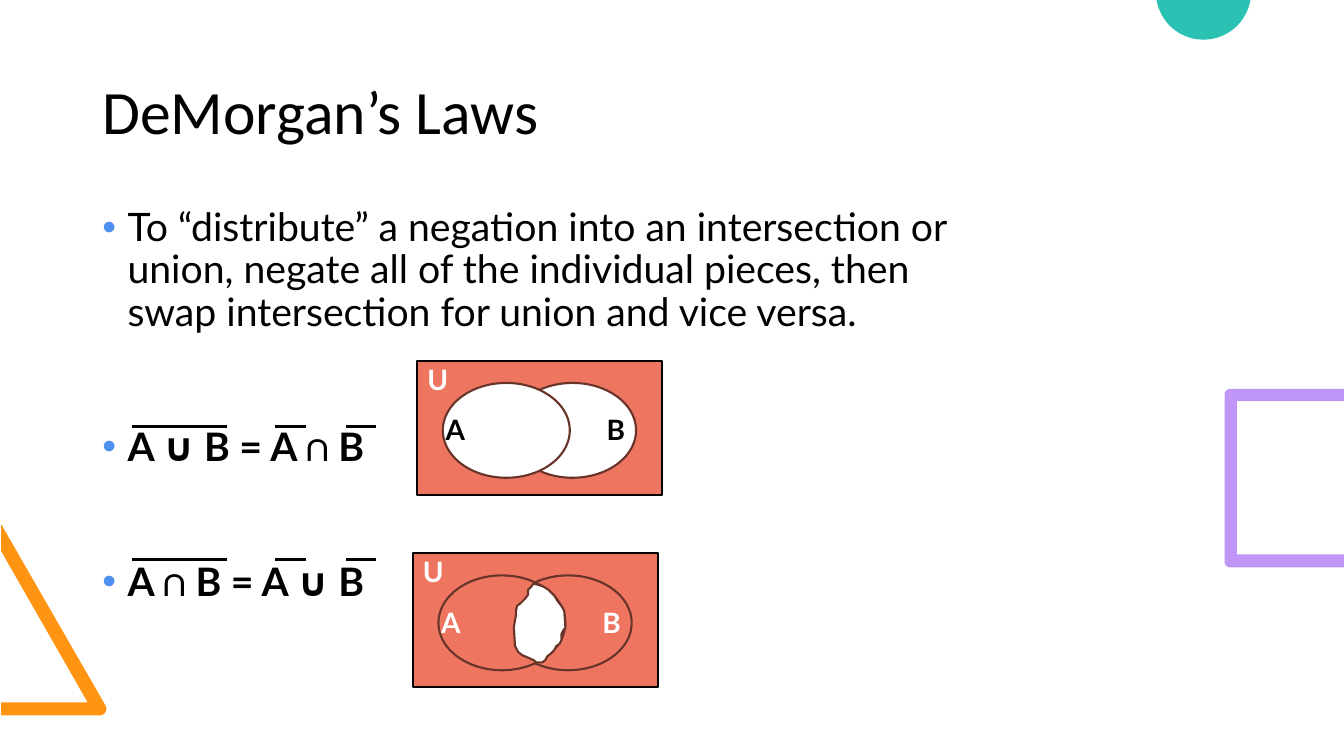
from math import cos, radians, sin

from lxml.etree import SubElement
from pptx import Presentation
from pptx.dml.color import RGBColor
from pptx.enum.shapes import MSO_CONNECTOR, MSO_SHAPE
from pptx.enum.text import MSO_ANCHOR, MSO_AUTO_SIZE, PP_ALIGN
from pptx.oxml.ns import qn
from pptx.util import Cm, Pt

BLACK = RGBColor(0x00, 0x00, 0x00)
WHITE = RGBColor(0xFF, 0xFF, 0xFF)
CORAL = RGBColor(0xEE, 0x76, 0x60)
BROWN = RGBColor(0x68, 0x34, 0x2A)
ORANGE = RGBColor(0xFF, 0x94, 0x13)
TEAL = RGBColor(0x2B, 0xC2, 0xB4)
PURPLE = RGBColor(0xC0, 0x97, 0xF8)
BULLET_BLUE = "4D90EF"

TITLE = "DeMorgan’s Laws"
BULLETS = [
    ("To “distribute” a negation into an intersection or union, negate all of "
     "the individual pieces, then swap intersection for union and vice versa.", False, 10),
    ("A ∪ B = A ∩ B", True, 58.2),
    ("A ∩ B = A ∪ B", True, 58.2),
]

NEGATION_BARS = [(3.33, 5.72), (6.93, 7.70), (8.71, 9.47)]
NEGATION_ROWS = [10.74, 14.10]

VENN_DIAGRAMS = [
    (10.52, 9.09, WHITE, BLACK),
    (10.41, 13.94, CORAL, WHITE),
]
UNIVERSE_SIZE = (6.17, 3.38)
SET_SIZE = (3.20, 2.39)
SET_OFFSETS = [(2.31, 0.56), (0.64, 0.56)]
LABEL_SIZE = (0.99, 1.12)
LABEL_OFFSETS = {"U": (0, -0.09), "A": (0.46, 1.19), "B": (4.52, 1.19)}

INTERSECTION = [
    (13.44, 14.71), (13.39, 14.78), (13.31, 14.86), (13.31, 14.99), (13.23, 15.09),
    (13.13, 15.19), (13.03, 15.27), (13.00, 15.42), (13.00, 15.52), (12.95, 15.80),
    (12.98, 16.28), (13.06, 16.43), (13.16, 16.51), (13.28, 16.56), (13.39, 16.61),
    (13.46, 16.64), (13.51, 16.69), (13.67, 16.69), (13.74, 16.64), (13.79, 16.54),
    (13.87, 16.48), (13.97, 16.38), (14.02, 16.28), (14.10, 16.23), (14.15, 16.13),
    (14.15, 15.98), (14.20, 15.88), (14.25, 15.82), (14.22, 15.39), (14.15, 15.27),
    (14.05, 15.14), (13.97, 15.01), (13.82, 14.86), (13.69, 14.78), (13.54, 14.73),
]


def arc(center_x, center_y, radius, start, end, steps=12):
    angles = [radians(start + (end - start) * step / steps) for step in range(steps + 1)]
    return [(center_x + radius * cos(angle), center_y + radius * sin(angle))
            for angle in angles]


DECORATIONS = [
    ([(0.03, 18.03), (0.03, 17.70), (2.21, 17.70), (0.03, 13.89), (0.03, 13.21)]
     + arc(2.51, 17.86, 0.17, -30, 90), ORANGE),
    (arc(30.33, -0.20, 1.20, 9.6, 170.4, 60), TEAL),
    ([(33.87, 14.30), (33.87, 13.97), (31.17, 13.97), (31.17, 10.11),
      (33.87, 10.11), (33.87, 9.80)]
     + arc(31.01, 9.95, 0.15, 270, 180) + arc(31.01, 14.15, 0.15, 180, 90), PURPLE),
]


def paint(shape, fill, line=None):
    shape.shadow.inherit = False
    shape.fill.solid()
    shape.fill.fore_color.rgb = fill
    if line is None:
        shape.line.fill.background()
    else:
        shape.line.color.rgb = line
        shape.line.width = Pt(1.5)


def add_outline(shapes, points, fill, line=None):
    corners = [(Cm(x), Cm(y)) for x, y in points]
    builder = shapes.build_freeform(*corners[0])
    builder.add_line_segments(corners[1:], close=True)
    paint(builder.convert_to_shape(), fill, line)


def add_text_box(shapes, left, top, width, height):
    text_frame = shapes.add_textbox(Cm(left), Cm(top), Cm(width), Cm(height)).text_frame
    text_frame.word_wrap = True
    return text_frame


def format_text(paragraph, font_name, size, color, bold=False):
    paragraph.alignment = PP_ALIGN.LEFT
    for run in paragraph.runs:
        run.font.name = font_name
        run.font.size = Pt(size)
        run.font.color.rgb = color
        run.font.bold = bold


def add_bullet(paragraph):
    properties = paragraph._p.get_or_add_pPr()
    properties.set("marL", str(Cm(0.635)))
    properties.set("indent", str(-Cm(0.635)))
    color = SubElement(properties, qn("a:buClr"))
    SubElement(color, qn("a:srgbClr")).set("val", BULLET_BLUE)
    SubElement(properties, qn("a:buFont")).set("typeface", "Arial")
    SubElement(properties, qn("a:buChar")).set("char", "•")


def add_title(slide):
    text_frame = add_text_box(slide.shapes, 2.33, 0.84, 29.21, 4.09)
    text_frame.vertical_anchor = MSO_ANCHOR.MIDDLE
    text_frame.text = TITLE
    paragraph = text_frame.paragraphs[0]
    paragraph.line_spacing = 0.9
    format_text(paragraph, "Calibri", 44, BLACK)


def add_body(slide):
    text_frame = add_text_box(slide.shapes, 2.33, 5.11, 22.25, 11.91)
    text_frame.text = "\n".join(text for text, bold, space in BULLETS)
    for paragraph, (text, bold, space) in zip(text_frame.paragraphs, BULLETS):
        paragraph.line_spacing = 0.9
        paragraph.space_before = Pt(space)
        paragraph.space_after = Pt(8)
        format_text(paragraph, "Lato", 28, BLACK, bold)
        add_bullet(paragraph)


def add_negation_bars(slide):
    for y in NEGATION_ROWS:
        for start, end in NEGATION_BARS:
            bar = slide.shapes.add_connector(
                MSO_CONNECTOR.STRAIGHT, Cm(start), Cm(y), Cm(end), Cm(y))
            bar.line.color.rgb = BLACK
            bar.line.width = Pt(2.25)
            SubElement(bar._element.spPr, qn("a:effectLst"))


def add_venn_diagram(slide, left, top, set_fill, set_label_color):
    shapes = slide.shapes.add_group_shape().shapes
    universe = shapes.add_shape(
        MSO_SHAPE.RECTANGLE, Cm(left), Cm(top), *map(Cm, UNIVERSE_SIZE))
    paint(universe, CORAL, BLACK)
    for x, y in SET_OFFSETS:
        ellipse = shapes.add_shape(
            MSO_SHAPE.OVAL, Cm(left + x), Cm(top + y), *map(Cm, SET_SIZE))
        paint(ellipse, set_fill, BROWN)
    for label, (x, y) in LABEL_OFFSETS.items():
        text_frame = add_text_box(shapes, left + x, top + y, *LABEL_SIZE)
        text_frame.auto_size = MSO_AUTO_SIZE.SHAPE_TO_FIT_TEXT
        text_frame.text = label
        color = WHITE if label == "U" else set_label_color
        format_text(text_frame.paragraphs[0], "Lato", 20, color, True)


def main():
    presentation = Presentation()
    presentation.slide_width = Cm(33.87)
    presentation.slide_height = Cm(19.05)
    slide = presentation.slides.add_slide(presentation.slide_layouts[6])
    for points, color in DECORATIONS:
        add_outline(slide.shapes, points, color)
    add_title(slide)
    add_body(slide)
    add_negation_bars(slide)
    for diagram in VENN_DIAGRAMS:
        add_venn_diagram(slide, *diagram)
    add_outline(slide.shapes, INTERSECTION, WHITE, BROWN)
    presentation.save("out.pptx")


if __name__ == "__main__":
    main()
